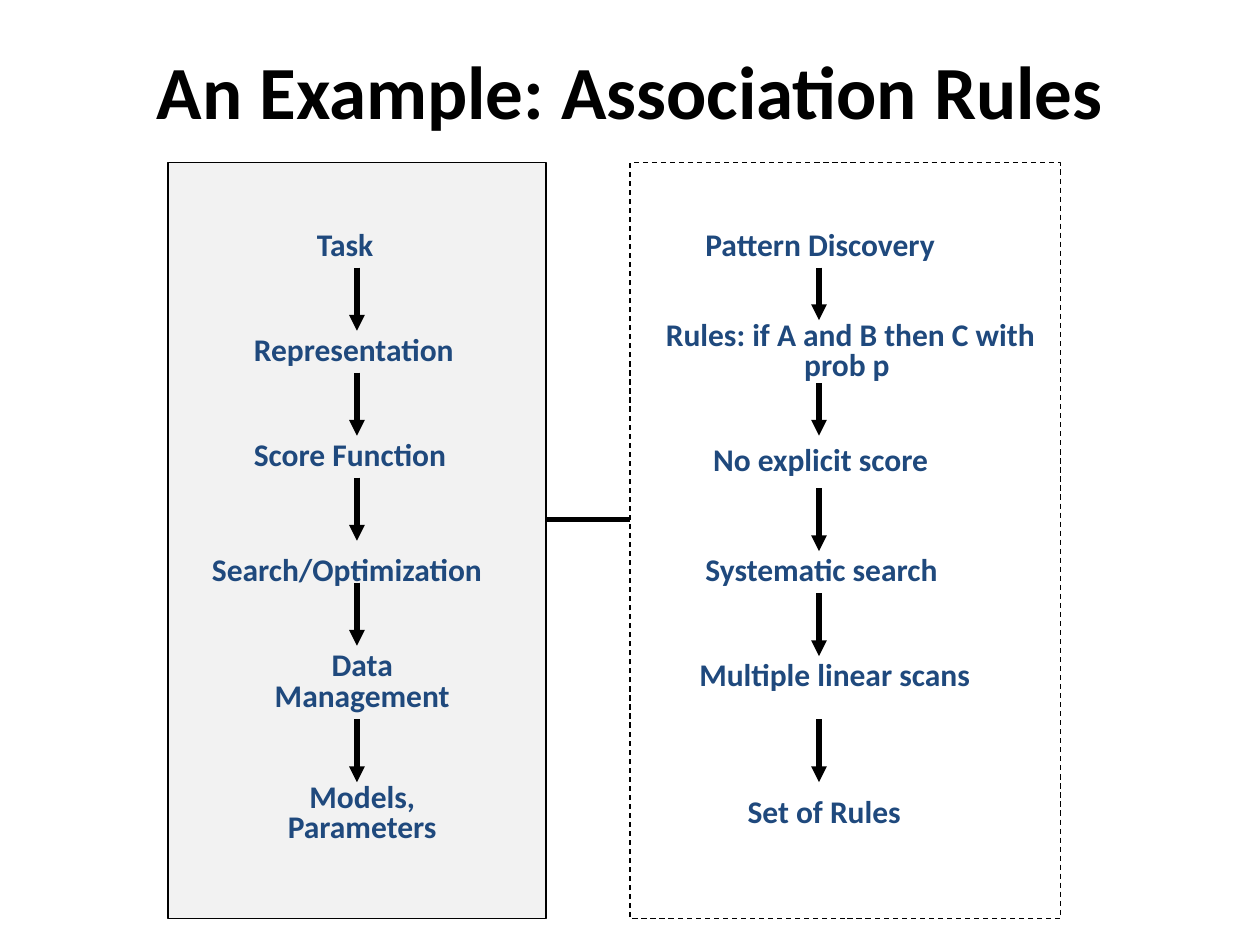
from lxml import etree
from pptx import Presentation
from pptx.dml.color import RGBColor
from pptx.enum import dml, shapes, text
from pptx.oxml import ns
from pptx.util import Pt

BLACK = RGBColor(0x00, 0x00, 0x00)
NAVY = RGBColor(0x1F, 0x49, 0x7D)
GRAY = RGBColor(0xF2, 0xF2, 0xF2)
LEFT, CENTER = text.PP_ALIGN.LEFT, text.PP_ALIGN.CENTER
ARROW_LENGTH = 36
ONE_LINE, TWO_LINES = 24.5, 42.5

COMPONENTS = [
    ("Task", 174, 129, 84, ONE_LINE, LEFT),
    ("Representation", 138, 189, 150, ONE_LINE, LEFT),
    ("Score Function", 138, 249, 150, ONE_LINE, LEFT),
    ("Search/Optimization", 114, 315, 198, ONE_LINE, LEFT),
    ("Data Management", 132, 369, 150, TWO_LINES, CENTER),
    ("Models, Parameters", 132, 444, 150, TWO_LINES, CENTER),
]
ASSOCIATION_RULES = [
    ("Pattern Discovery", 396, 129, 180, ONE_LINE, LEFT),
    ("Rules: if A and B then C with prob p ", 366, 180, 240, TWO_LINES, CENTER),
    ("No explicit score ", 396, 252, 150, ONE_LINE, CENTER),
    ("Systematic search", 396, 315, 204, ONE_LINE, LEFT),
    ("Multiple linear scans", 378, 375, 198, ONE_LINE, CENTER),
    ("Set of Rules", 396, 453, 150, ONE_LINE, CENTER),
]
COMPONENT_ARROWS = [(top, top + ARROW_LENGTH) for top in (153, 213, 273, 333, 411)]
RULE_ARROWS = [(153, 183), (219, 249)] + [(top, top + ARROW_LENGTH) for top in (279, 339, 411)]


class FlowSlide:
    """Draws the text, panels and lines of a flow diagram on one slide."""

    font = "Calibri"
    line_width = 3

    def __init__(self, slide):
        self.slide = slide

    def label(self, words, left, top, width, height, align, size=18, color=NAVY,
              spacing=0.8, anchor=text.MSO_ANCHOR.MIDDLE):
        box = self.slide.shapes.add_textbox(Pt(left), Pt(top), Pt(width), Pt(height))
        frame = box.text_frame
        frame.word_wrap = True
        frame.vertical_anchor = anchor
        paragraph = frame.paragraphs[0]
        paragraph.text = words
        paragraph.alignment = align
        paragraph.line_spacing = spacing
        paragraph.font.name = self.font
        paragraph.font.size = Pt(size)
        paragraph.font.bold = True
        paragraph.font.color.rgb = color

    def panel(self, left, top, width, height, fill=None, dash=None):
        shape = self.slide.shapes.add_shape(
            shapes.MSO_SHAPE.RECTANGLE, Pt(left), Pt(top), Pt(width), Pt(height))
        shape.shadow.inherit = False
        if fill is None:
            shape.fill.background()
        else:
            shape.fill.solid()
            shape.fill.fore_color.rgb = fill
        shape.line.color.rgb = BLACK
        shape.line.width = Pt(0.75)
        shape.line.dash_style = dash

    def line(self, x1, y1, x2, y2, arrow=False):
        connector = self.slide.shapes.add_connector(
            shapes.MSO_CONNECTOR.STRAIGHT, Pt(x1), Pt(y1), Pt(x2), Pt(y2))
        connector.line.color.rgb = BLACK
        connector.line.width = Pt(self.line_width)
        if arrow:
            outline = connector.line._get_or_add_ln()
            etree.SubElement(outline, ns.qn("a:tailEnd"), type="triangle")
        etree.SubElement(connector._element.spPr, ns.qn("a:effectLst"))

    def flow(self, labels, arrow_x, arrows):
        for label in labels:
            self.label(*label)
        for top, bottom in arrows:
            self.line(arrow_x, top, arrow_x, bottom, arrow=True)


def main():
    presentation = Presentation()
    presentation.slide_width, presentation.slide_height = Pt(720), Pt(540)
    slide = presentation.slides.add_slide(presentation.slide_layouts[6])
    diagram = FlowSlide(slide)
    diagram.label("An Example: Association Rules", 36, 21.6, 648, 90, CENTER,
                  size=42.9, color=BLACK, spacing=1, anchor=text.MSO_ANCHOR.TOP)
    diagram.panel(96, 93, 216, 432, fill=GRAY)
    diagram.flow(COMPONENTS, 204, COMPONENT_ARROWS)
    diagram.flow(ASSOCIATION_RULES, 468, RULE_ARROWS)
    diagram.panel(360, 93, 246, 432, dash=dml.MSO_LINE.DASH)
    diagram.line(312, 297, 360, 297)
    presentation.save("out.pptx")


if __name__ == "__main__":
    main()
